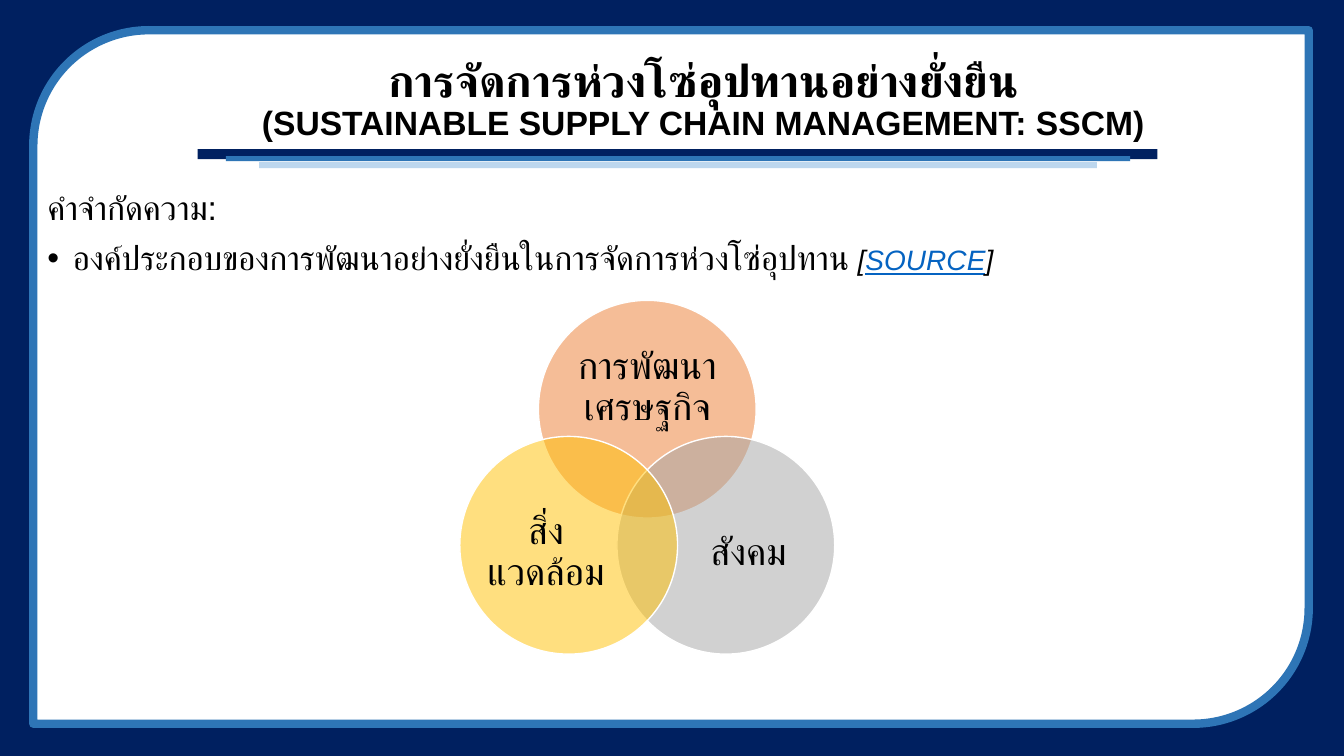
import math
import pptx
import pptx.util
import pptx.dml.color
import pptx.enum.shapes
import pptx.enum.text
import pptx.oxml
import pptx.oxml.ns

Inches, Pt = pptx.util.Inches, pptx.util.Pt
KIND = pptx.enum.shapes.MSO_SHAPE
ALIGN = pptx.enum.text.PP_ALIGN
ANCHOR = pptx.enum.text.MSO_ANCHOR
FIT = pptx.enum.text.MSO_AUTO_SIZE

COLORS = {
    "navy": "002060", "blue": "2E75B6", "pale": "BDD7EE",
    "white": "FFFFFF", "black": "000000", "link": "0563C1",
    "orange": "ED7D31", "gray": "A5A5A5", "gold": "FFC000",
}


def rgb(name):
    return pptx.dml.color.RGBColor.from_string(COLORS[name])


def draw(slide, kind, box, fill, line=None, width=1, alpha=None):
    shape = slide.shapes.add_shape(kind, *map(Inches, box))
    shape.shadow.inherit = False
    shape.fill.solid()
    shape.fill.fore_color.rgb = rgb(fill)
    if line:
        shape.line.color.rgb = rgb(line)
        shape.line.width = Pt(width)
    else:
        shape.line.fill.background()
    if alpha:
        color = shape.element.spPr.find(".//" + pptx.oxml.ns.qn("a:srgbClr"))
        color.append(pptx.oxml.parse_xml(
            f'<a:alpha {pptx.oxml.ns.nsdecls("a")} val="{alpha * 1000}"/>'))


def style(run, size, face="Arial", color="black"):
    run.font.size = Pt(size)
    run.font.name = face
    run.font.color.rgb = rgb(color)


def place(shape, box):
    shape.left, shape.top, shape.width, shape.height = map(Inches, box)
    # Bring in front of the frame
    shape.element.getparent().append(shape.element)
    shape.text_frame.word_wrap = True
    shape.text_frame.auto_size = FIT.NONE


def bullet(para, char=None):
    props = para._p.get_or_add_pPr()
    indent = Inches(0.25) if char else 0
    props.set("marL", str(indent))
    props.set("indent", str(-indent))
    tag = f'buChar char="{char}"' if char else "buNone"
    name, _, attr = tag.partition(" ")
    props.append(pptx.oxml.parse_xml(
        f'<a:{name} {pptx.oxml.ns.nsdecls("a")} {attr}/>'))


# Navy border, white panel and the three rules under the title
def frame(slide, box):
    left, top, width, height = box
    draw(slide, KIND.RECTANGLE, box, "navy")
    draw(slide, KIND.ROUND_2_DIAG_RECTANGLE,
         (left + 0.33, top + 0.3, width - 0.68, height - 0.62),
         "white", "blue", 6)
    for x, y, w, h, color in ((1.96, 1.48, 9.52, 0.1, "navy"),
                              (2.24, 1.55, 8.97, 0.05, "blue"),
                              (2.57, 1.61, 8.31, 0.06, "pale")):
        draw(slide, KIND.RECTANGLE, (left + x, top + y, w, h), color)


def heading(slide, box):
    title = slide.shapes.title
    place(title, box)
    title.text_frame.vertical_anchor = ANCHOR.MIDDLE
    title.text_frame.text = ("การจัดการห่วงโซ่อุปทานอย่างยั่งยืน\v"
                             "(SUSTAINABLE SUPPLY CHAIN MANAGEMENT: SSCM)")
    para = title.text_frame.paragraphs[0]
    para.alignment = ALIGN.CENTER
    para.line_spacing = 0.9
    for run, size in zip(para.runs, (32, 24)):
        style(run, size)
        run.font.bold = True


def body(slide, box):
    holder = slide.placeholders[1]
    place(holder, box)
    text = holder.text_frame
    text.text = "คำจำกัดความ:"
    first, second = text.paragraphs[0], text.add_paragraph()
    for para, gap, char in ((first, 0, None), (second, 10, "•")):
        para.line_spacing = 0.9
        para.space_before = Pt(gap)
        bullet(para, char)
    style(first.runs[0], 24)
    for words, size, color in (
            ("องค์ประกอบของการพัฒนาอย่างยั่งยืนในการจัดการห่วงโซ่อุปทาน ", 24, "black"),
            ("[", 20, "black"), ("SOURCE", 20, "link"), ("]", 20, "black")):
        run = second.add_run()
        run.text = words
        style(run, size, color=color)
        run.font.italic = size == 20
        run.font.underline = color == "link"


def label(slide, box, words):
    text = slide.shapes.add_textbox(*map(Inches, box)).text_frame
    text.word_wrap = True
    text.vertical_anchor = ANCHOR.MIDDLE
    text.margin_left = text.margin_right = 0
    text.margin_top = text.margin_bottom = 0
    text.text = words
    para = text.paragraphs[0]
    para.alignment = ALIGN.CENTER
    para.line_spacing = 0.9
    style(para.runs[0], 27, "Calibri")


# Three circles set around the middle of the diagram
def venn(slide, box):
    left, top, width, height = box
    size, orbit = 2.16, 0.9
    mid_x, mid_y = left + width / 2, top + size / 2 + orbit
    for angle, color, words, inset in (
            (-90, "orange", "การพัฒนาเศรษฐกิจ", (0.29, 0.38, 1.58, 0.97)),
            (30, "gray", "สังคม", (0.66, 0.56, 1.29, 1.19)),
            (150, "gold", "สิ่งแวดล้อม", (0.21, 0.56, 1.29, 1.19))):
        x = mid_x + orbit * math.cos(math.radians(angle)) - size / 2
        y = mid_y + orbit * math.sin(math.radians(angle)) - size / 2
        draw(slide, KIND.OVAL, (x, y, size, size), color, "white", 1, 50)
        dx, dy, w, h = inset
        label(slide, (x + dx, y + dy, w, h), words)


def main():
    deck = pptx.Presentation()
    deck.slide_width, deck.slide_height = Inches(13.33), Inches(7.5)
    slide = deck.slides.add_slide(deck.slide_layouts[1])
    frame(slide, (0, 0, 13.33, 7.5))
    heading(slide, (1.8, 0.49, 10.35, 1.02))
    body(slide, (0.37, 1.85, 12.65, 1.18))
    venn(slide, (4.56, 2.98, 3.72, 3.51))
    deck.save("out.pptx")


if __name__ == "__main__":
    main()
